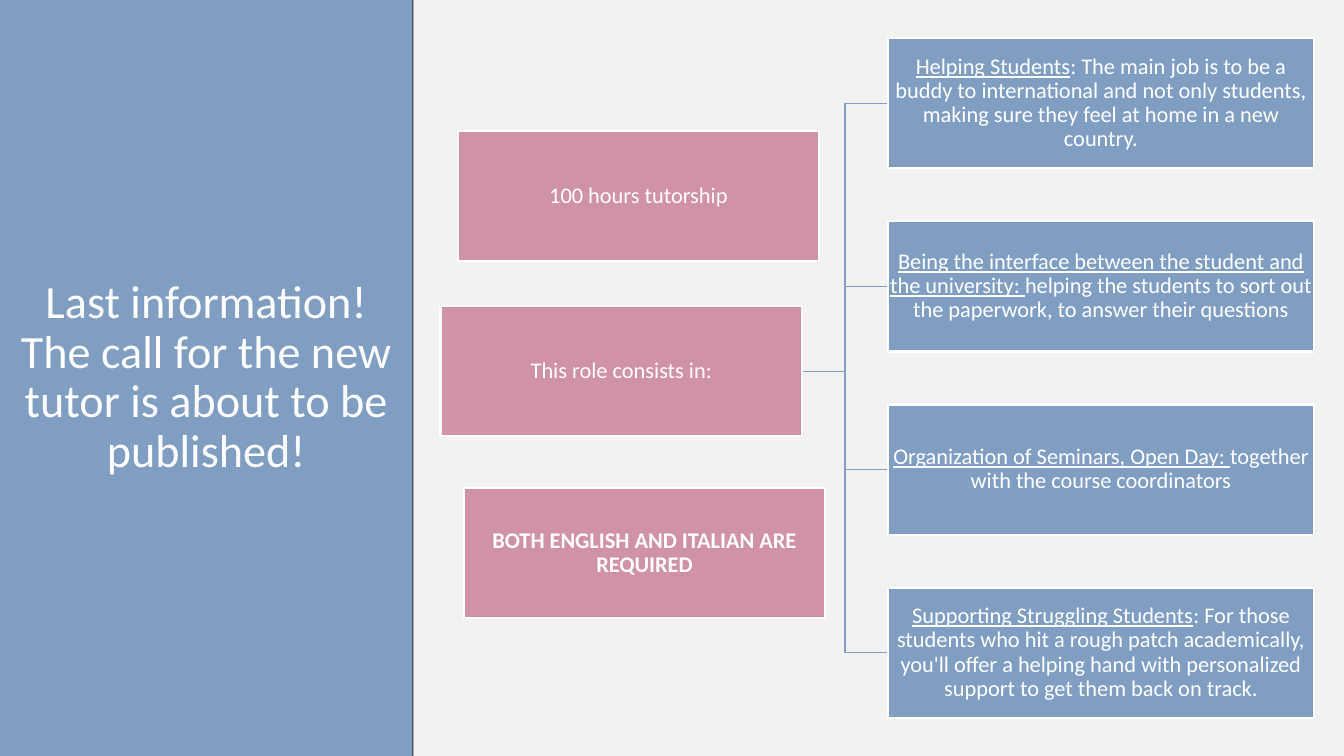
from dataclasses import dataclass

import lxml.etree
import pptx
import pptx.dml.color
import pptx.enum.shapes
import pptx.enum.text
import pptx.util

COLORS = {
    "blue": "809EC2",
    "pink": "D092A7",
    "white": "FFFFFF",
    "light": "F2F2F2",
    "edge": "262626",
}
FONT = "Calibri"
WIDTH = pptx.util.Inches(13.33)
HEIGHT = pptx.util.Inches(7.5)

# Lengths are percentages of the slide's width (x) or height (y).
PANEL_W = 30.68
EDGE_W = 0.08
BOX_H = 17.2
TOPIC_W = 26.9
DUTY_LEFT, DUTY_TOP, DUTY_W, DUTY_PITCH = 66.09, 5.07, 31.66, 24.22


@dataclass
class Run:
    text: str
    bold: bool = False
    underline: bool = False


@dataclass
class Box:
    left: float
    top: float
    width: float
    color: str
    runs: list[Run]

    @property
    def right(self) -> float:
        return self.left + self.width

    @property
    def middle(self) -> float:
        return self.top + BOX_H / 2


ROLE = Box(32.78, 40.53, TOPIC_W, "pink", [Run("This role consists in:")])
TOPICS = [
    Box(34.06, 17.33, TOPIC_W, "pink", [Run("100 hours tutorship")]),
    ROLE,
    Box(34.51, 64.53, TOPIC_W, "pink",
        [Run("BOTH ENGLISH AND ITALIAN ARE REQUIRED", bold=True)]),
]
DUTY_TEXTS = [
    ("Helping Students",
     ": The main job is to be a buddy to international and not only students, "
     "making sure they feel at home in a new country."),
    ("Being the interface between the student and the university: ",
     "helping the students to sort out the paperwork, to answer their questions"),
    ("Organization of Seminars, Open Day: ",
     "together with the course coordinators"),
    ("Supporting Struggling Students",
     ": For those students who hit a rough patch academically, you'll offer a "
     "helping hand with personalized support to get them back on track."),
]
DUTIES = [
    Box(DUTY_LEFT, DUTY_TOP + i * DUTY_PITCH, DUTY_W, "blue",
        [Run(name, underline=True), Run(detail)])
    for i, (name, detail) in enumerate(DUTY_TEXTS)
]


def x(percent: float) -> int:
    return round(WIDTH * percent / 100)


def y(percent: float) -> int:
    return round(HEIGHT * percent / 100)


def rgb(name: str) -> pptx.dml.color.RGBColor:
    return pptx.dml.color.RGBColor.from_string(COLORS[name])


def fill(sp, color: str) -> None:
    sp.fill.solid()
    sp.fill.fore_color.rgb = rgb(color)


def add_rect(shapes, left: float, top: float, width: float, height: float,
             color: str):
    sp = shapes.add_shape(pptx.enum.shapes.MSO_SHAPE.RECTANGLE,
                          x(left), y(top), x(width), y(height))
    sp.shadow.inherit = False
    fill(sp, color)
    sp.line.fill.background()
    return sp


def centre_text(tf):
    """Centre the frame's text both ways and return its first paragraph."""
    tf.word_wrap = True
    tf.auto_size = pptx.enum.text.MSO_AUTO_SIZE.NONE
    tf.vertical_anchor = pptx.enum.text.MSO_ANCHOR.MIDDLE
    p = tf.paragraphs[0]
    p.alignment = pptx.enum.text.PP_ALIGN.CENTER
    p.line_spacing = 0.9
    return p


def add_run(p, run: Run, size: float) -> None:
    r = p.add_run()
    r.text = run.text
    r.font.name = FONT
    r.font.size = pptx.util.Pt(size)
    r.font.bold = run.bold
    r.font.underline = run.underline
    r.font.color.rgb = rgb("white")


def add_box(shapes, box: Box) -> None:
    sp = add_rect(shapes, box.left, box.top, box.width, BOX_H, box.color)
    sp.line.color.rgb = rgb("white")
    sp.line.width = pptx.util.Pt(1.5)
    tf = sp.text_frame
    inset = pptx.util.Inches(0.01)
    tf.margin_left = tf.margin_right = tf.margin_top = tf.margin_bottom = inset
    p = centre_text(tf)
    for run in box.runs:
        add_run(p, run, 16)


def add_branch(shapes, start: Box, end: Box) -> None:
    """Draw an elbow line from the start's right side to the end's left side."""
    bend = x((start.right + end.left) / 2)
    builder = shapes.build_freeform(x(start.right), y(start.middle))
    builder.add_line_segments(
        [(bend, y(start.middle)), (bend, y(end.middle)),
         (x(end.left), y(end.middle))], close=False)
    sp = builder.convert_to_shape()
    sp.shadow.inherit = False
    sp.fill.background()
    sp.line.color.rgb = rgb("blue")
    sp.line.width = pptx.util.Pt(1)


def set_title(title, lines: list[str]) -> None:
    title.left, title.top, title.width, title.height = 0, 0, x(PANEL_W), HEIGHT
    fill(title, "blue")
    p = centre_text(title.text_frame)
    for i, line in enumerate(lines):
        if i:
            p.add_line_break()
        add_run(p, Run(line), 33)


def main() -> None:
    prs = pptx.Presentation()
    prs.slide_width, prs.slide_height = WIDTH, HEIGHT
    slide = prs.slides.add_slide(prs.slide_layouts[5])
    shapes = slide.shapes
    title = shapes.title

    add_rect(shapes, PANEL_W, 0, 100 - PANEL_W, 100, "light")
    add_rect(shapes, 0, 0, PANEL_W + EDGE_W, 100, "edge")
    set_title(title, ["Last information!",
                      "The call for the new tutor is about to be published!"])
    title.element.getparent().append(title.element)  # in front of the panels

    for duty in reversed(DUTIES):
        add_branch(shapes, ROLE, duty)
    for box in TOPICS + DUTIES:
        add_box(shapes, box)
    prs.save("out.pptx")


if __name__ == "__main__":
    main()
